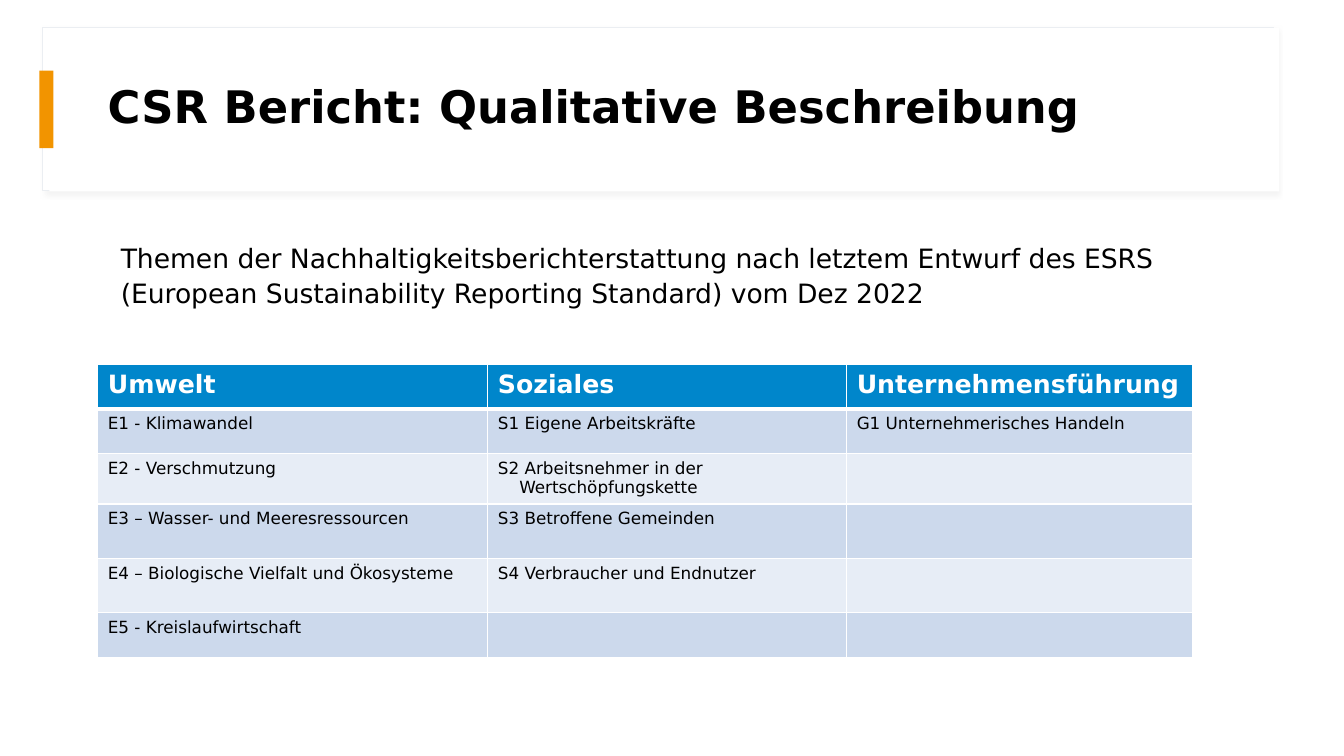
from dataclasses import dataclass

from lxml import etree
from pptx import Presentation
from pptx.dml.color import RGBColor
from pptx.enum.shapes import MSO_SHAPE
from pptx.enum.text import MSO_ANCHOR
from pptx.oxml import parse_xml
from pptx.oxml.ns import nsdecls, qn
from pptx.util import Pt

RECTANGLE = MSO_SHAPE.RECTANGLE
MIDDLE = MSO_ANCHOR.MIDDLE
TOP = MSO_ANCHOR.TOP


@dataclass(frozen=True)
class Theme:
    font: str = "DejaVu Sans"
    black: str = "000000"
    white: str = "FFFFFF"
    accent: str = "F29400"
    outline: str = "EBEEF2"
    shadow: str = "D9D9D9"
    header: str = "0086CB"
    bands: tuple[str, str] = ("CCD9EC", "E7EDF6")
    title_size: float = 32
    intro_size: float = 19
    header_size: float = 18
    cell_size: float = 12


@dataclass(frozen=True)
class Box:
    left: float
    top: float
    width: float
    height: float

    def lengths(self) -> tuple[Pt, Pt, Pt, Pt]:
        return Pt(self.left), Pt(self.top), Pt(self.width), Pt(self.height)


@dataclass(frozen=True)
class Panel:
    box: Box
    fill: str
    line: str | None = None
    shadow: str | None = None


@dataclass(frozen=True)
class TextBlock:
    box: Box
    text: str
    size: float
    bold: bool
    line_spacing: float
    anchor: MSO_ANCHOR


THEME = Theme()

PANELS = (
    Panel(Box(30.24, 19.44, 879.12, 116.64), THEME.white, THEME.outline, THEME.shadow),
    Panel(Box(35.28, 20.16, 878.4, 116.64), THEME.white),
    Panel(Box(28.08, 50.4, 10.08, 55.44), THEME.accent),
)

TEXT_BLOCKS = (
    TextBlock(Box(69.84, 31.68, 816.48, 92.88), "CSR Bericht: Qualitative Beschreibung",
              THEME.title_size, True, 0.9, MIDDLE),
    TextBlock(Box(79.2, 167.04, 772.56, 55.44),
              "Themen der Nachhaltigkeitsberichterstattung nach letztem Entwurf des ESRS "
              "(European Sustainability Reporting Standard) vom Dez 2022",
              THEME.intro_size, False, 1.1, TOP),
)

TABLE_BOX = Box(69.84, 260.64, 781.92, 208.8)
COLUMN_WIDTHS = (278.64, 256.32, 246.96)
ROW_HEIGHTS = (31.68, 31.68, 31.68, 38.88, 38.88, 31.68)
TOPICS = (
    ("Umwelt", "Soziales", "Unternehmensführung"),
    ("E1 - Klimawandel", "S1 Eigene Arbeitskräfte", "G1 Unternehmerisches Handeln"),
    ("E2 - Verschmutzung", "S2 Arbeitsnehmer in der\nWertschöpfungskette", ""),
    ("E3 – Wasser- und Meeresressourcen", "S3 Betroffene Gemeinden", ""),
    ("E4 – Biologische Vielfalt und Ökosysteme", "S4 Verbraucher und Endnutzer", ""),
    ("E5 - Kreislaufwirtschaft", "", ""),
)
CONTINUATION_INDENT = 15.25
THIN_BORDER = 1
HEADER_BORDER = 3


def style_font(paragraph, size: float, color: str, bold: bool) -> None:
    font = paragraph.font
    font.name = THEME.font
    font.size = Pt(size)
    font.bold = bold
    font.color.rgb = RGBColor.from_string(color)


def add_soft_shadow(shape, color: str) -> None:
    effects = shape._element.spPr.find(qn("a:effectLst"))
    effects.append(parse_xml(
        f'<a:outerShdw {nsdecls("a")} blurRad="{Pt(4)}" dist="{Pt(3)}" dir="2700000" '
        f'algn="tl" rotWithShape="0"><a:srgbClr val="{color}"><a:alpha val="30000"/>'
        '</a:srgbClr></a:outerShdw>'))


def add_panel(slide, panel: Panel) -> None:
    shape = slide.shapes.add_shape(RECTANGLE, *panel.box.lengths())
    shape.shadow.inherit = False
    shape.fill.solid()
    shape.fill.fore_color.rgb = RGBColor.from_string(panel.fill)
    if panel.line:
        shape.line.color.rgb = RGBColor.from_string(panel.line)
        shape.line.width = Pt(0.75)
    else:
        shape.line.fill.background()
    if panel.shadow:
        add_soft_shadow(shape, panel.shadow)


def add_text_block(slide, block: TextBlock) -> None:
    frame = slide.shapes.add_textbox(*block.box.lengths()).text_frame
    frame.word_wrap = True
    frame.vertical_anchor = block.anchor
    paragraph = frame.paragraphs[0]
    paragraph.text = block.text
    paragraph.line_spacing = block.line_spacing
    style_font(paragraph, block.size, THEME.black, block.bold)


def set_borders(cell, top: float, bottom: float) -> None:
    """Draw white cell borders; the side borders are always thin."""
    properties = cell._tc.get_or_add_tcPr()
    widths = {"lnL": THIN_BORDER, "lnR": THIN_BORDER, "lnT": top, "lnB": bottom}
    for position, (tag, width) in enumerate(widths.items()):
        border = etree.Element(qn(f"a:{tag}"), w=str(Pt(width)))
        fill = etree.SubElement(border, qn("a:solidFill"))
        etree.SubElement(fill, qn("a:srgbClr"), val=THEME.white)
        properties.insert(position, border)


def fill_cell(cell, text: str, row: int) -> None:
    is_header = row == 0
    color = THEME.header if is_header else THEME.bands[(row - 1) % 2]
    cell.fill.solid()
    cell.fill.fore_color.rgb = RGBColor.from_string(color)
    set_borders(cell, HEADER_BORDER if row == 1 else THIN_BORDER,
                HEADER_BORDER if is_header else THIN_BORDER)
    cell.text = text
    for index, paragraph in enumerate(cell.text_frame.paragraphs):
        if index:
            paragraph._p.get_or_add_pPr().set("marL", str(Pt(CONTINUATION_INDENT)))
        style_font(paragraph, THEME.header_size if is_header else THEME.cell_size,
                   THEME.white if is_header else THEME.black, is_header)


def add_topic_table(slide) -> None:
    table = slide.shapes.add_table(
        len(TOPICS), len(COLUMN_WIDTHS), *TABLE_BOX.lengths()).table
    for column, width in zip(table.columns, COLUMN_WIDTHS):
        column.width = Pt(width)
    for row, height in zip(table.rows, ROW_HEIGHTS):
        row.height = Pt(height)
    for row_index, texts in enumerate(TOPICS):
        for column_index, text in enumerate(texts):
            fill_cell(table.cell(row_index, column_index), text, row_index)


def main() -> None:
    presentation = Presentation()
    presentation.slide_width = Pt(960)
    presentation.slide_height = Pt(540)
    slide = presentation.slides.add_slide(presentation.slide_layouts[6])
    for panel in PANELS:
        add_panel(slide, panel)
    title, introduction = TEXT_BLOCKS
    add_text_block(slide, title)
    add_topic_table(slide)
    add_text_block(slide, introduction)
    presentation.save("out.pptx")


if __name__ == "__main__":
    main()
